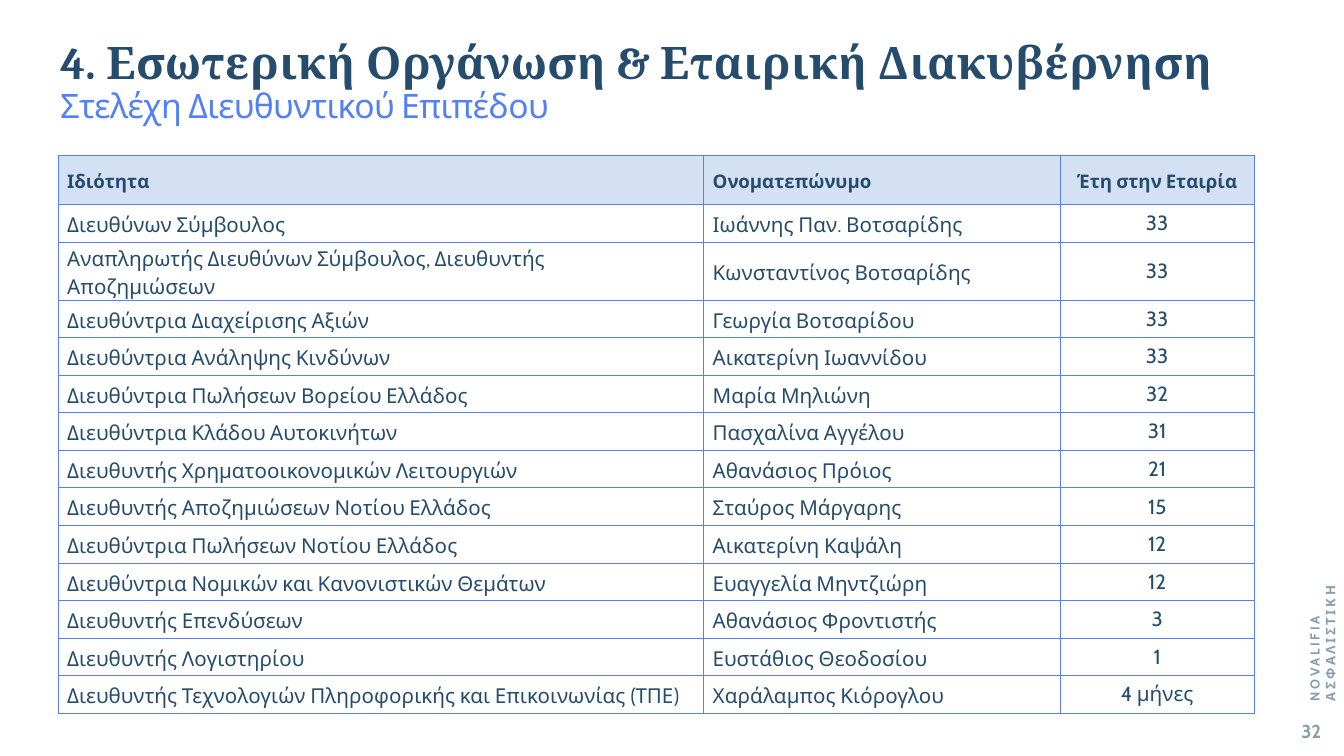
from dataclasses import dataclass

from lxml import etree
from pptx import Presentation
from pptx.dml.color import RGBColor
from pptx.enum.text import MSO_ANCHOR, MSO_AUTO_SIZE, PP_ALIGN
from pptx.oxml.ns import qn
from pptx.util import Cm, Pt

TOP, MID = MSO_ANCHOR.TOP, MSO_ANCHOR.MIDDLE
LEFT, CENTER, RIGHT = PP_ALIGN.LEFT, PP_ALIGN.CENTER, PP_ALIGN.RIGHT
FIXED = MSO_AUTO_SIZE.NONE


@dataclass(frozen=True)
class Theme:
    """Colours, fonts and type sizes of the slide."""
    navy: str = "254C6D"
    blue: str = "5480F7"
    pale: str = "D4E0F3"
    gray: str = "849EAA"
    serif: str = "Cambria"
    sans: str = "Cabin"
    title: float = 24
    sub: float = 18
    body: float = 11
    small: float = 10
    tiny: float = 7


THEME = Theme()
HEAD = ("Ιδιότητα", "Ονοματεπώνυμο", "Έτη στην Εταιρία")
STAFF = (
    ("Διευθύνων Σύμβουλος", "Ιωάννης Παν. Βοτσαρίδης", "33"),
    ("Αναπληρωτής Διευθύνων Σύμβουλος, Διευθυντής Αποζημιώσεων",
     "Κωνσταντίνος Βοτσαρίδης", "33"),
    ("Διευθύντρια Διαχείρισης Αξιών", "Γεωργία Βοτσαρίδου", "33"),
    ("Διευθύντρια Ανάληψης Κινδύνων", "Αικατερίνη Ιωαννίδου", "33"),
    ("Διευθύντρια Πωλήσεων Βορείου Ελλάδος", "Μαρία Μηλιώνη", "32"),
    ("Διευθύντρια Κλάδου Αυτοκινήτων", "Πασχαλίνα Αγγέλου", "31"),
    ("Διευθυντής Χρηματοοικονομικών Λειτουργιών", "Αθανάσιος Πρόιος", "21"),
    ("Διευθυντής Αποζημιώσεων Νοτίου Ελλάδος", "Σταύρος Μάργαρης", "15"),
    ("Διευθύντρια Πωλήσεων Νοτίου Ελλάδος", "Αικατερίνη Καψάλη", "12"),
    ("Διευθύντρια Νομικών και Κανονιστικών Θεμάτων",
     "Ευαγγελία Μηντζιώρη", "12"),
    ("Διευθυντής Επενδύσεων", "Αθανάσιος Φροντιστής", "3"),
    ("Διευθυντής Λογιστηρίου", "Ευστάθιος Θεοδοσίου", "1"),
    ("Διευθυντής Τεχνολογιών Πληροφορικής και Επικοινωνίας (ΤΠΕ)",
     "Χαράλαμπος Κιόρογλου", "4 μήνες"),
)
WIDTHS = (12.2, 6.74, 3.66)
HEAD_H, ROW_H = 0.93, 0.71


def style(font, size, color, bold=False, face=THEME.sans):
    """Set the face, size, colour and weight of a font."""
    font.name, font.size, font.bold = face, Pt(size), bold
    font.color.rgb = RGBColor.from_string(color)


def track(run, points):
    """Set the letter spacing of a run."""
    run.font._element.set("spc", str(round(points * 100)))


def place(shape, left, top, width, height):
    """Move and size a shape, in centimetres."""
    shape.left, shape.top = Cm(left), Cm(top)
    shape.width, shape.height = Cm(width), Cm(height)


def add_title(slide, main, sub):
    """Fill the title placeholder with a heading and a second line."""
    shape = slide.shapes.title
    place(shape, 0.89, 0.53, 22.4, 1.8)
    frame = shape.text_frame
    frame.auto_size, frame.vertical_anchor = FIXED, TOP
    frame.margin_left = frame.margin_right = Cm(0.25)
    frame.margin_top = frame.margin_bottom = Cm(0.25)
    para = frame.paragraphs[0]
    para.alignment, para.line_spacing = LEFT, 0.9
    run = para.add_run()
    run.text = main
    style(run.font, THEME.title, THEME.navy, True, THEME.serif)
    track(run, 0.2)
    para.add_line_break()
    run = para.add_run()
    run.text = sub
    style(run.font, THEME.sub, THEME.blue)
    track(run, -0.3)


def add_label(slide, text, box, size, align=LEFT, turn=0, gap=0):
    """Add a small gray label, turned if asked."""
    shape = slide.shapes.add_textbox(*map(Cm, box))
    shape.rotation = turn
    frame = shape.text_frame
    frame.word_wrap, frame.auto_size = True, FIXED
    para = frame.paragraphs[0]
    para.alignment = align
    run = para.add_run()
    run.text = text
    style(para.font, size, THEME.gray, True)
    track(run, gap)


def add_edges(cell, color, width):
    """Draw the four borders of a table cell."""
    props = cell._tc.get_or_add_tcPr()
    for side in ("lnL", "lnR", "lnT", "lnB"):
        line = etree.SubElement(props, qn(f"a:{side}"), w=str(Pt(width)))
        fill = etree.SubElement(line, qn("a:solidFill"))
        etree.SubElement(fill, qn("a:srgbClr"), val=color)


def fill_cell(cell, text, head, last):
    """Write and format one table cell."""
    cell.text = text
    cell.vertical_anchor = MID
    cell.margin_left = cell.margin_right = Cm(0.17)
    cell.margin_top = cell.margin_bottom = 0
    para = cell.text_frame.paragraphs[0]
    para.alignment = CENTER if last else LEFT
    para.line_spacing = 1.0 if last and not head else 1.15
    style(para.font, THEME.small if head else THEME.body, THEME.navy, head)
    add_edges(cell, THEME.blue, 0.5)
    if head:
        cell.fill.solid()
        cell.fill.fore_color.rgb = RGBColor.from_string(THEME.pale)
    else:
        cell.fill.background()


def add_staff(slide):
    """Add the table of managers."""
    rows = (HEAD, *STAFF)
    height = HEAD_H + ROW_H * len(STAFF)
    box = map(Cm, (1.1, 2.94, sum(WIDTHS), height))
    table = slide.shapes.add_table(len(rows), len(WIDTHS), *box).table
    table.first_row = table.horz_banding = False
    for col, width in zip(table.columns, WIDTHS):
        col.width = Cm(width)
    for i, texts in enumerate(rows):
        table.rows[i].height = Cm(ROW_H if i else HEAD_H)
        for j, text in enumerate(texts):
            fill_cell(table.cell(i, j), text, i == 0, j == len(WIDTHS) - 1)


def main():
    """Build the slide and save it."""
    deck = Presentation()
    deck.slide_width, deck.slide_height = Cm(25.4), Cm(14.29)
    slide = deck.slides.add_slide(deck.slide_layouts[5])
    add_staff(slide)
    add_title(slide, "4. Εσωτερική Οργάνωση & Εταιρική Διακυβέρνηση",
              "Στελέχη Διευθυντικού Επιπέδου")
    add_label(slide, "32", (23.9, 13.49, 1.32, 0.69), THEME.small, RIGHT)
    add_label(slide, "NOVALIFIA ΑΣΦΑΛΙΣΤΙΚΗ", (22.68, 11.05, 4.34, 0.56),
              THEME.tiny, turn=270, gap=1.4)
    deck.save("out.pptx")


if __name__ == "__main__":
    main()
